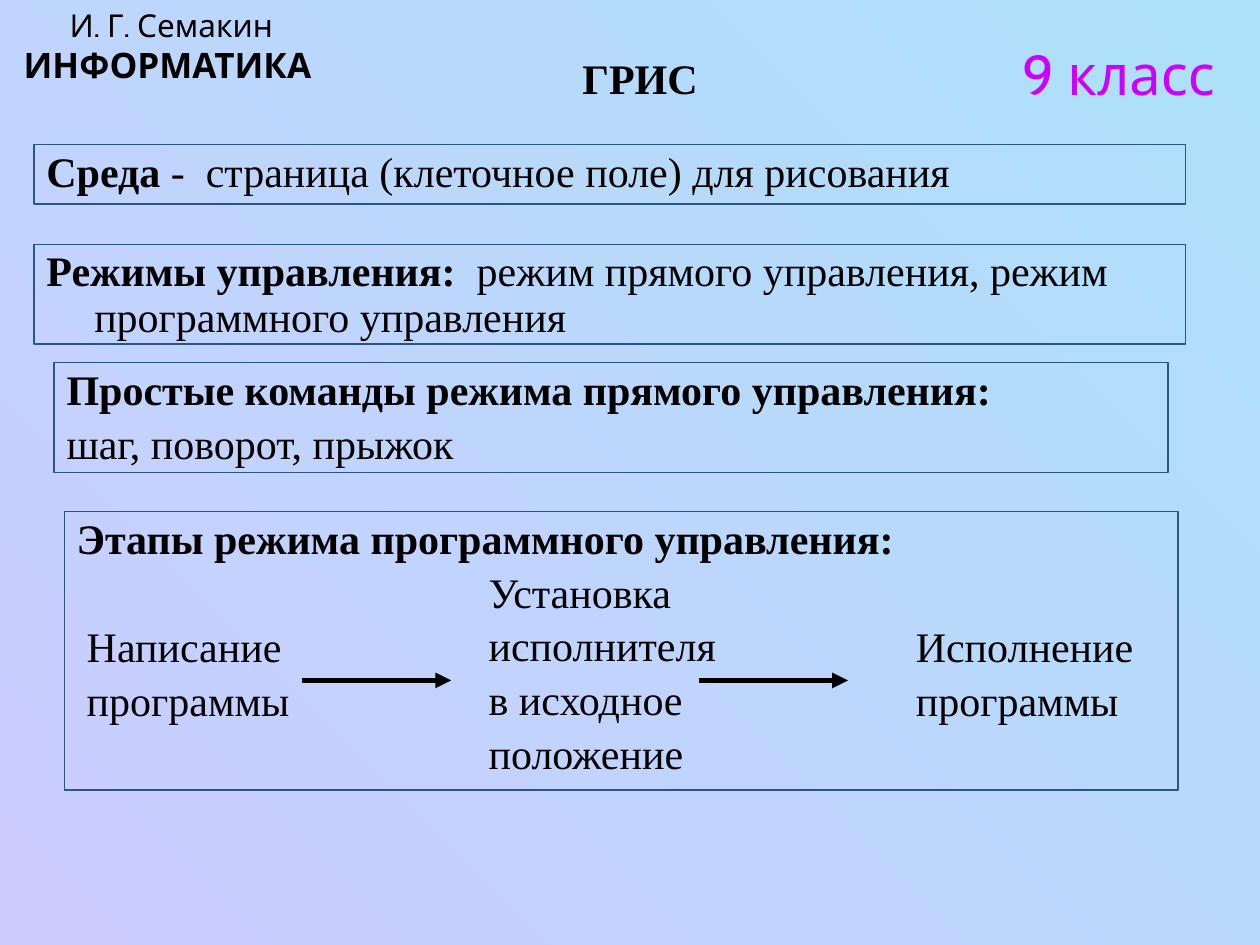
import pptx
import pptx.util
import pptx.dml.color
import pptx.enum.text
import pptx.enum.shapes
import pptx.oxml.ns
from lxml import etree

Inches = pptx.util.Inches
Pt = pptx.util.Pt
ALIGN = pptx.enum.text.PP_ALIGN
ANCHOR = pptx.enum.text.MSO_ANCHOR
SERIF = "Times New Roman"
SANS = "Cabin"
BLACK = "000000"


def color(code):
    return pptx.dml.color.RGBColor.from_string(code)


def add_node(parent, tag, **attrs):
    return etree.SubElement(parent, pptx.oxml.ns.qn(tag), attrs)


def style(run, size, font=SERIF, bold=False, code=BLACK):
    run.font.size = Pt(size)
    run.font.name = font
    run.font.bold = bold
    run.font.color.rgb = color(code)


def space(para, lines=0.9, hang=0.38):
    para.line_spacing = lines
    para.space_before = Pt(4.8)
    props = para._p.get_or_add_pPr()
    props.set("marL", str(Inches(hang)))
    props.set("indent", str(Inches(-hang)))


def add_back(slide):
    fill = slide.background.fill
    fill.gradient()
    fill.gradient_angle = 45
    for stop, code in zip(fill.gradient_stops, ("CCCCFF", "ADE1F9")):
        stop.color.rgb = color(code)


def add_title(slide, text, *place):
    title = slide.shapes.title
    title.left, title.top, title.width, title.height = map(Inches, place)
    frame = title.text_frame
    frame.text = text
    frame.auto_size = pptx.enum.text.MSO_AUTO_SIZE.NONE
    frame.vertical_anchor = ANCHOR.TOP
    para = frame.paragraphs[0]
    para.alignment = ALIGN.CENTER
    space(para, lines=0.8)
    style(para.runs[0], 24, bold=True)


def add_text(shapes, lines, place, anchor=ANCHOR.TOP):
    frame = shapes.add_textbox(*map(Inches, place)).text_frame
    frame.word_wrap = True
    frame.vertical_anchor = anchor
    frame.text = "\n".join(lines)
    return frame.paragraphs


def add_label(slide, rows, place, anchor=ANCHOR.TOP):
    paras = add_text(slide.shapes, [row[0] for row in rows], place, anchor)
    for para, (text, *look) in zip(paras, rows):
        para.alignment = ALIGN.CENTER
        style(para.runs[0], *look)


def add_stage(shapes, lines, *place):
    for para in add_text(shapes, lines, place):
        space(para, hang=0)
        style(para.runs[0], 24)


def add_box(shapes, place, head, rest=""):
    box = shapes.add_shape(pptx.enum.shapes.MSO_SHAPE.RECTANGLE, *map(Inches, place))
    box.shadow.inherit = False
    box.fill.background()
    box.line.color.rgb = color("2B5481")
    box.line.width = Pt(0.75)
    frame = box.text_frame
    frame.word_wrap = True
    frame.vertical_anchor = ANCHOR.TOP
    para = frame.paragraphs[0]
    para.text = head
    para.alignment = ALIGN.LEFT
    space(para)
    style(para.runs[0], 24, bold=True)
    if rest:
        run = para.add_run()
        run.text = rest
        style(run, 24)
    return frame


def add_row(frame, text):
    para = frame.add_paragraph()
    para.text = text
    para.alignment = ALIGN.LEFT
    space(para)
    style(para.runs[0], 24)


def add_arrow(shapes, left, top, width):
    kind = pptx.enum.shapes.MSO_CONNECTOR.STRAIGHT
    arrow = shapes.add_connector(
        kind, Inches(left), Inches(top), Inches(left + width), Inches(top))
    arrow.line.color.rgb = color(BLACK)
    arrow.line.width = Pt(3)
    add_node(arrow.line._get_or_add_ln(), "a:tailEnd", type="triangle")
    add_node(arrow._element.spPr, "a:effectLst")


def add_stages(slide):
    shapes = slide.shapes.add_group_shape().shapes
    add_box(shapes, (0.51, 4.06, 8.84, 2.21),
            "Этапы режима программного управления:")
    add_stage(shapes, ["Написание", "программы"], 0.59, 4.92, 2.1, 0.92)
    add_stage(shapes, ["Установка", "исполнителя", "в исходное", "положение"],
              3.78, 4.49, 2.1, 1.77)
    add_stage(shapes, ["Исполнение", "программы"], 7.17, 4.92, 2.1, 0.92)
    for left in (2.4, 5.55):
        add_arrow(shapes, left, 5.4, 1.18)


def main():
    deck = pptx.Presentation()
    deck.slide_width, deck.slide_height = Inches(10), Inches(7.5)
    slide = deck.slides.add_slide(deck.slide_layouts[5])
    add_back(slide)
    add_title(slide, "ГРИС", 3.27, 0.44, 3.62, 0.39)
    add_label(slide, [("9 класс", 32, SANS, False, "CC00FF")],
              (7.76, 0.28, 2.24, 0.6), ANCHOR.MIDDLE)
    add_label(slide, [("И. Г. Семакин", 18, SANS),
                      ("ИНФОРМАТИКА ", 20, SANS, True)], (0, 0, 2.72, 0.73))
    frame = add_box(slide.shapes, (0.43, 2.88, 8.84, 0.87),
                    "Простые команды режима прямого управления:")
    add_row(frame, "шаг, поворот, прыжок")
    add_box(slide.shapes, (0.27, 1.15, 9.14, 0.47),
            "Среда", " -  страница (клеточное поле) для рисования")
    add_box(slide.shapes, (0.27, 1.94, 9.14, 0.79), "Режимы управления: ",
            " режим прямого управления, режим программного управления")
    add_stages(slide)
    deck.save("out.pptx")


if __name__ == "__main__":
    main()
